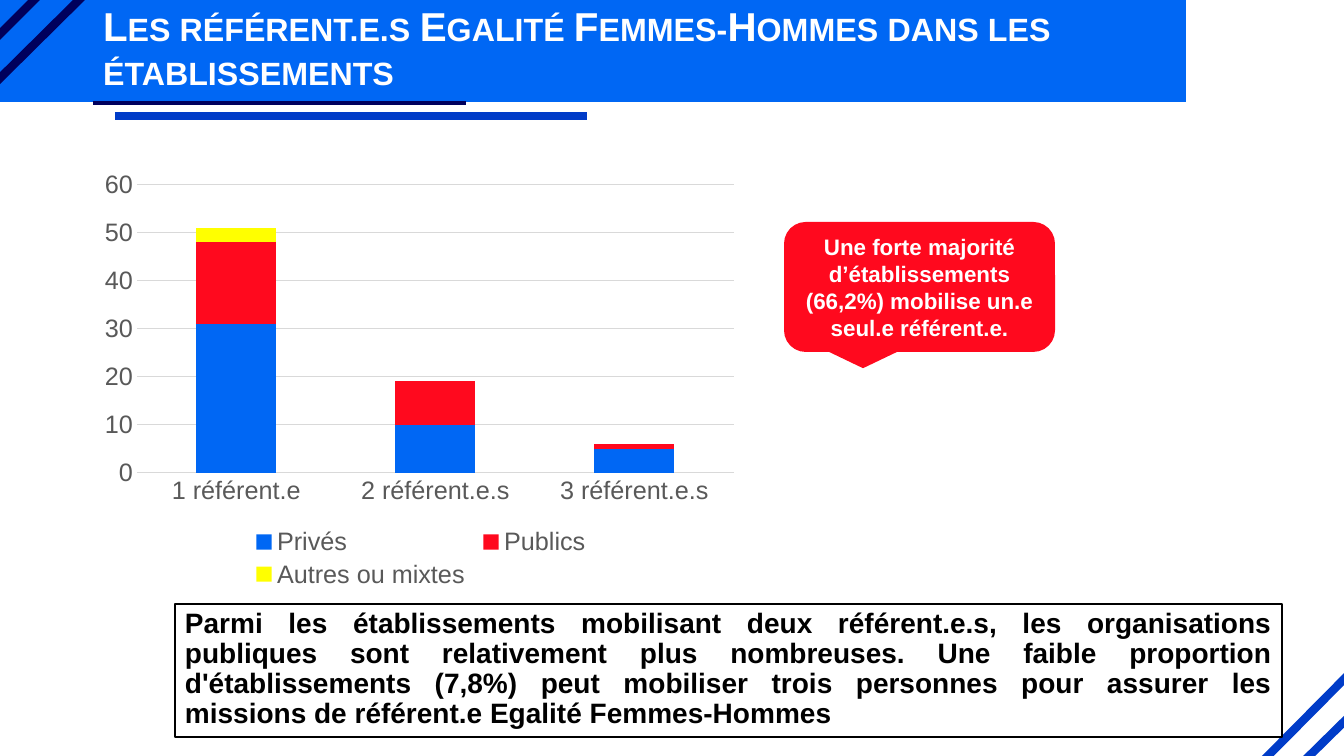
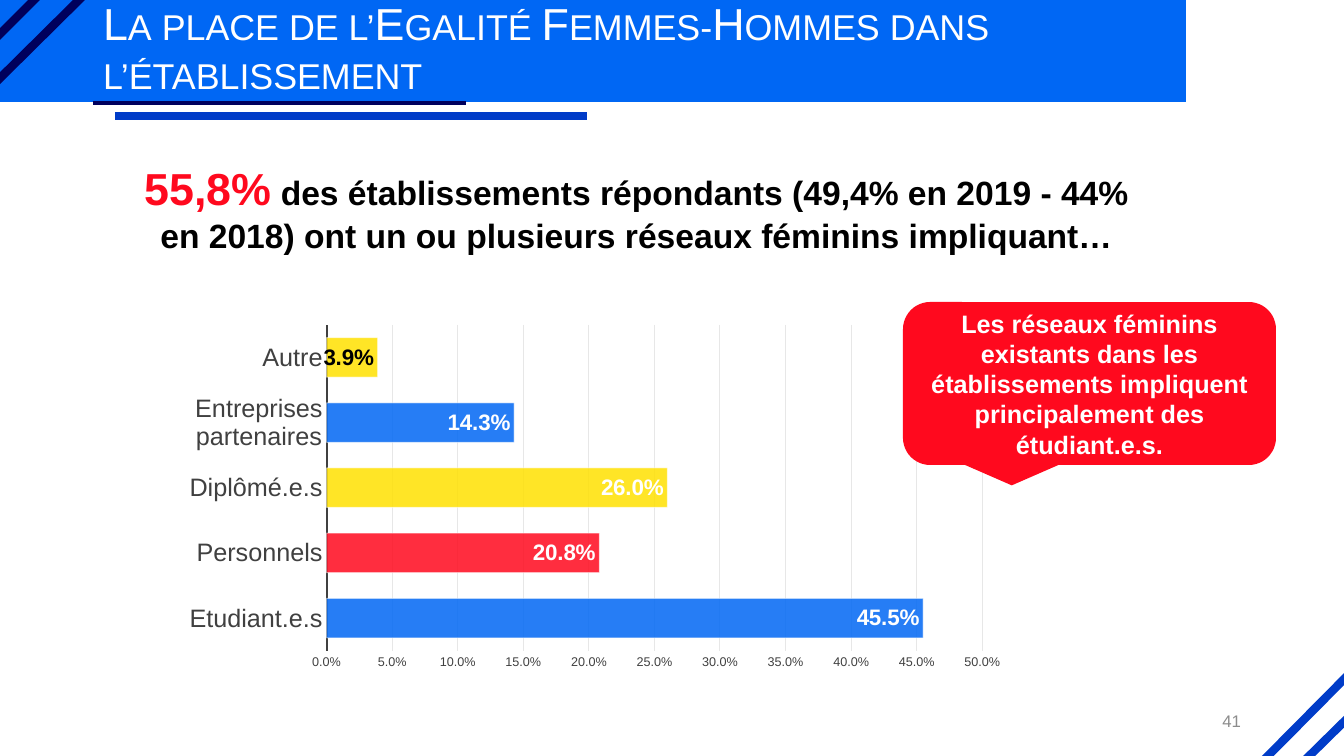
import pptx
import pptx.chart.data
import pptx.dml.color
import pptx.enum.chart
import pptx.enum.shapes
import pptx.enum.text
import pptx.oxml
import pptx.oxml.ns
import pptx.util

RGB = pptx.dml.color.RGBColor
ALIGN = pptx.enum.text.PP_ALIGN
ANCHOR = pptx.enum.text.MSO_ANCHOR
SHAPE = pptx.enum.shapes.MSO_SHAPE
CHART = pptx.enum.chart.XL_CHART_TYPE
Pt = pptx.util.Pt

BLUE = RGB(0x00, 0x67, 0xF4)
MID_BLUE = RGB(0x00, 0x3C, 0xC8)
NAVY = RGB(0x00, 0x00, 0x5C)
RED = RGB(0xFF, 0x09, 0x1E)
YELLOW = RGB(0xFF, 0xFF, 0x00)
GOLD = RGB(0xFF, 0xE1, 0x01)
WHITE = RGB(0xFF, 0xFF, 0xFF)
BLACK = RGB(0x00, 0x00, 0x00)
DARK_GREY = RGB(0x40, 0x40, 0x40)
GREY = RGB(0x59, 0x59, 0x59)
NUMBER_GREY = RGB(0x8C, 0x8C, 0x8C)
RULE_GREY = RGB(0xD9, 0xD9, 0xD9)
PALE_GREY = RGB(0xE7, 0xE7, 0xE7)

FONT = "Arial"
SLIDE_WIDTH, SLIDE_HEIGHT = 1344, 756
EMU_PER_PX = 12192000 / SLIDE_WIDTH

# Shared frame: band, corner stripes and rules (x1, y1, x2, y2, colour, points)
BAND = (0, 0, 1186, 102)
TITLE_BOX = (93, 1, 1159, 99)
STRIPES = [
    (1294, 771, 1359, 707, MID_BLUE, 6),
    (1252, 772, 1362, 661, MID_BLUE, 6),
    (-9, 43, 43, -9, NAVY, 6),
    (-9, 87, 88, -9, NAVY, 6),
    (115, 116, 587, 116, MID_BLUE, 6),
    (93, 103, 466, 103, NAVY, 3),
]

# Content of the first slide
REFERENTS = {
    "title": "Les référent.e.s Egalité Femmes-Hommes dans les établissements",
    "title_size": 28.8,
    "bold": True,
    "categories": ["1 référent.e", "2 référent.e.s", "3 référent.e.s"],
    "series": [
        ("Privés", [31, 10, 5], BLUE),
        ("Publics", [17, 9, 1], RED),
        ("Autres ou mixtes", [3, None, None], YELLOW),
    ],
    "callout": "Une forte majorité d’établissements (66,2%) mobilise un.e "
               "seul.e référent.e.",
    "comment": "Parmi les établissements mobilisant deux référent.e.s, les "
               "organisations publiques sont relativement plus nombreuses. "
               "Une faible proportion d'établissements (7,8%) peut mobiliser "
               "trois personnes pour assurer les missions de référent.e "
               "Egalité Femmes-Hommes",
}

# Content of the second slide
NETWORKS = {
    "title": "La place de l’Egalité Femmes-Hommes dans l’établissement",
    "title_size": 32,
    "bold": False,
    "lead": [
        ("55,8%", 32, RED),
        (" des établissements répondants (49,4% en 2019 - 44% en 2018) ont "
         "un ou plusieurs réseaux féminins impliquant…", 24, BLACK),
    ],
    "bars": [
        ("Etudiant.e.s", 0.455, BLUE),
        ("Personnels", 0.208, RED),
        ("Diplômé.e.s", 0.26, GOLD),
        ("Entreprises partenaires", 0.143, BLUE),
        ("Autre", 0.039, GOLD),
    ],
    "callout": "Les réseaux féminins existants dans les établissements "
               "impliquent principalement des étudiant.e.s.",
    "number": "41",
}


def px(length):
    return pptx.util.Emu(round(length * EMU_PER_PX))


def place(box):
    return [px(length) for length in box]


def style(font, size, colour, bold=False):
    font.name, font.size, font.bold = FONT, Pt(size), bold
    font.color.rgb = colour


def write(frame, runs, bold=False, align=ALIGN.LEFT, anchor=ANCHOR.TOP):
    """Fill a frame with one paragraph of (text, size, colour) runs."""
    frame.word_wrap = True
    frame.vertical_anchor = anchor
    paragraph = frame.paragraphs[0]
    paragraph.alignment = align
    for text, size, colour in runs:
        run = paragraph.add_run()
        run.text = text
        style(run.font, size, colour, bold)
    return paragraph


def decorate(slide, layout):
    """Draw the shared frame and hand it over to the layout."""
    band = slide.shapes.add_shape(SHAPE.RECTANGLE, *place(BAND))
    band.shadow.inherit = False
    band.fill.solid()
    band.fill.fore_color.rgb = BLUE
    band.line.fill.background()
    parts = [band]
    for x1, y1, x2, y2, colour, width in STRIPES:
        stripe = slide.shapes.add_connector(
            pptx.enum.shapes.MSO_CONNECTOR.STRAIGHT, *place((x1, y1, x2, y2)))
        stripe.line.color.rgb = colour
        stripe.line.width = Pt(width)
        stripe._element.spPr.append(pptx.oxml.parse_xml(
            "<a:effectLst %s/>" % pptx.oxml.ns.nsdecls("a")))
        parts.append(stripe)
    for number, part in enumerate(parts, 101):
        part._element.xpath(".//p:cNvPr")[0].set("id", str(number))
        layout.shapes._spTree.append(part._element)


def add_title(slide, content):
    title = slide.shapes.title
    title.left, title.top, title.width, title.height = place(TITLE_BOX)
    title.text_frame.auto_size = pptx.enum.text.MSO_AUTO_SIZE.NONE
    paragraph = write(title.text_frame,
                      [(content["title"], content["title_size"], WHITE)],
                      content["bold"], anchor=ANCHOR.MIDDLE)
    paragraph.line_spacing = 0.9
    paragraph.runs[0].font._element.set("cap", "small")


def add_callout(slide, box, text, size):
    callout = slide.shapes.add_shape(SHAPE.ROUNDED_RECTANGULAR_CALLOUT,
                                     *place(box))
    callout.shadow.inherit = False
    callout.fill.solid()
    callout.fill.fore_color.rgb = RED
    callout.line.fill.background()
    write(callout.text_frame, [(text, size, WHITE)], True, ALIGN.CENTER,
          ANCHOR.MIDDLE)


def fix_layout(parent, before, chart_box, inner_box, target=""):
    """Pin a plot area or legend, given in slide px, inside its chart."""
    left, top, width, height = chart_box
    x, y, w, h = inner_box
    values = {"x": (x - left) / width, "y": (y - top) / height,
              "w": w / width, "h": h / height}
    modes = '<c:xMode val="edge"/><c:yMode val="edge"/>'
    sizes = "".join('<c:%s val="%.3f"/>' % item for item in values.items())
    for old in parent.xpath("c:layout"):
        parent.remove(old)
    parent.insert(before, pptx.oxml.parse_xml(
        "<c:layout %s><c:manualLayout>%s%s%s</c:manualLayout></c:layout>"
        % (pptx.oxml.ns.nsdecls("c"), target, modes, sizes)))


def add_chart(slide, kind, box, plot_box, data, gap):
    chart = slide.shapes.add_chart(kind, *place(box), data).chart
    chart.has_title = False
    chart.has_legend = False
    chart.font.name = FONT
    chart.plots[0].gap_width = gap
    chart.plots[0].vary_by_categories = False
    fix_layout(chart._chartSpace.xpath(".//c:plotArea")[0], 0, box, plot_box,
               '<c:layoutTarget val="inner"/>')
    return chart


def style_axes(chart, colour, line, value_size, grid, top, step):
    """Set fonts, lines and scale; line is (colour, points)."""
    category, value = chart.category_axis, chart.value_axis
    for axis, size in ((category, 18), (value, value_size)):
        axis.major_tick_mark = pptx.enum.chart.XL_TICK_MARK.NONE
        axis.minor_tick_mark = pptx.enum.chart.XL_TICK_MARK.NONE
        style(axis.tick_labels.font, size, colour)
    category.has_major_gridlines = False
    category.format.line.color.rgb, category.format.line.width = line[0], Pt(line[1])
    value.format.line.fill.background()
    value.minimum_scale, value.maximum_scale, value.major_unit = 0, top, step
    value.has_major_gridlines = True
    value.major_gridlines.format.line.color.rgb = grid
    value.major_gridlines.format.line.width = Pt(0.75)


def set_alpha(series, fill_parent, percent):
    for colour in series._element.xpath(
            "c:dPt/c:spPr/%sa:solidFill/a:srgbClr" % fill_parent):
        colour.append(pptx.oxml.parse_xml('<a:alpha %s val="%d"/>' % (
            pptx.oxml.ns.nsdecls("a"), percent * 1000)))


def build_referents(slide):
    content = REFERENTS
    add_title(slide, content)

    # Boxed comment
    comment = slide.shapes.add_textbox(*place((175, 604, 1107, 133)))
    comment.fill.solid()
    comment.fill.fore_color.rgb = WHITE
    comment.line.color.rgb = BLACK
    comment.line.width = Pt(1)
    write(comment.text_frame, [(content["comment"], 20, BLACK)], True,
          ALIGN.JUSTIFY).line_spacing = 0.9

    # Stacked columns
    data = pptx.chart.data.CategoryChartData()
    data.categories = content["categories"]
    for name, values, _ in content["series"]:
        data.add_series(name, values)
    box = (93, 162, 654, 431)
    chart = add_chart(slide, CHART.COLUMN_STACKED, box, (137, 185, 597, 288),
                      data, 150)
    chart.plots[0].overlap = 100
    style_axes(chart, GREY, (RULE_GREY, 0.75), 18, RULE_GREY, 60, 10)
    for series, (_, _, colour) in zip(chart.plots[0].series, content["series"]):
        series.format.fill.solid()
        series.format.fill.fore_color.rgb = colour
    chart.has_legend = True
    chart.legend.position = pptx.enum.chart.XL_LEGEND_POSITION.BOTTOM
    chart.legend.include_in_layout = False
    style(chart.legend.font, 18, GREY)
    fix_layout(chart.legend._element, 1, box, (246, 524, 350, 68))

    add_callout(slide, (784, 222, 271, 130), content["callout"], 16)


def build_networks(slide):
    content = NETWORKS
    add_title(slide, content)

    # Key figure and slide number
    lead = slide.shapes.add_textbox(*place((121, 156, 1031, 105)))
    write(lead.text_frame, content["lead"], True, ALIGN.CENTER)
    number = slide.shapes.add_textbox(*place((949, 701, 302, 40)))
    write(number.text_frame, [(content["number"], 12, NUMBER_GREY)],
          align=ALIGN.RIGHT, anchor=ANCHOR.MIDDLE)

    # Bars with one colour per group
    names, shares, colours = zip(*content["bars"])
    data = pptx.chart.data.CategoryChartData(number_format="0.0%")
    data.categories = names
    data.add_series("Series 1", shares)
    chart = add_chart(slide, CHART.BAR_CLUSTERED, (172, 318, 845, 359),
                      (327, 325, 656, 326), data, 65)
    style_axes(chart, DARK_GREY, (DARK_GREY, 1.5), 9, PALE_GREY, 0.5, 0.05)
    chart.value_axis.tick_labels.number_format = "0.0%"
    chart.value_axis.tick_labels.number_format_is_linked = False
    series = chart.plots[0].series[0]
    series.invert_if_negative = False
    for index, colour in enumerate(colours):
        bar = series.points[index].format
        bar.fill.solid()
        bar.fill.fore_color.rgb = colour
        bar.line.color.rgb = WHITE
        bar.line.width = Pt(0.75)
    set_alpha(series, "", 85)
    set_alpha(series, "a:ln/", 50)

    # Values at the bar ends, the shortest bar in black
    inside_end = pptx.enum.chart.XL_LABEL_POSITION.INSIDE_END
    labels = series.data_labels
    labels.show_value = True
    labels.number_format = "0.0%"
    labels.number_format_is_linked = False
    labels.position = inside_end
    style(labels.font, 16, WHITE, True)
    shortest = series.points[shares.index(min(shares))].data_label
    style(shortest.font, 16, BLACK, True)
    shortest.position = inside_end

    add_callout(slide, (903, 302, 373, 163), content["callout"], 18)


def main():
    deck = pptx.Presentation()
    deck.slide_width, deck.slide_height = px(SLIDE_WIDTH), px(SLIDE_HEIGHT)
    title_only = deck.slide_layouts[5]
    slides = [deck.slides.add_slide(title_only) for _ in range(2)]
    decorate(slides[0], title_only)
    build_referents(slides[0])
    build_networks(slides[1])
    deck.save("out.pptx")


if __name__ == "__main__":
    main()
